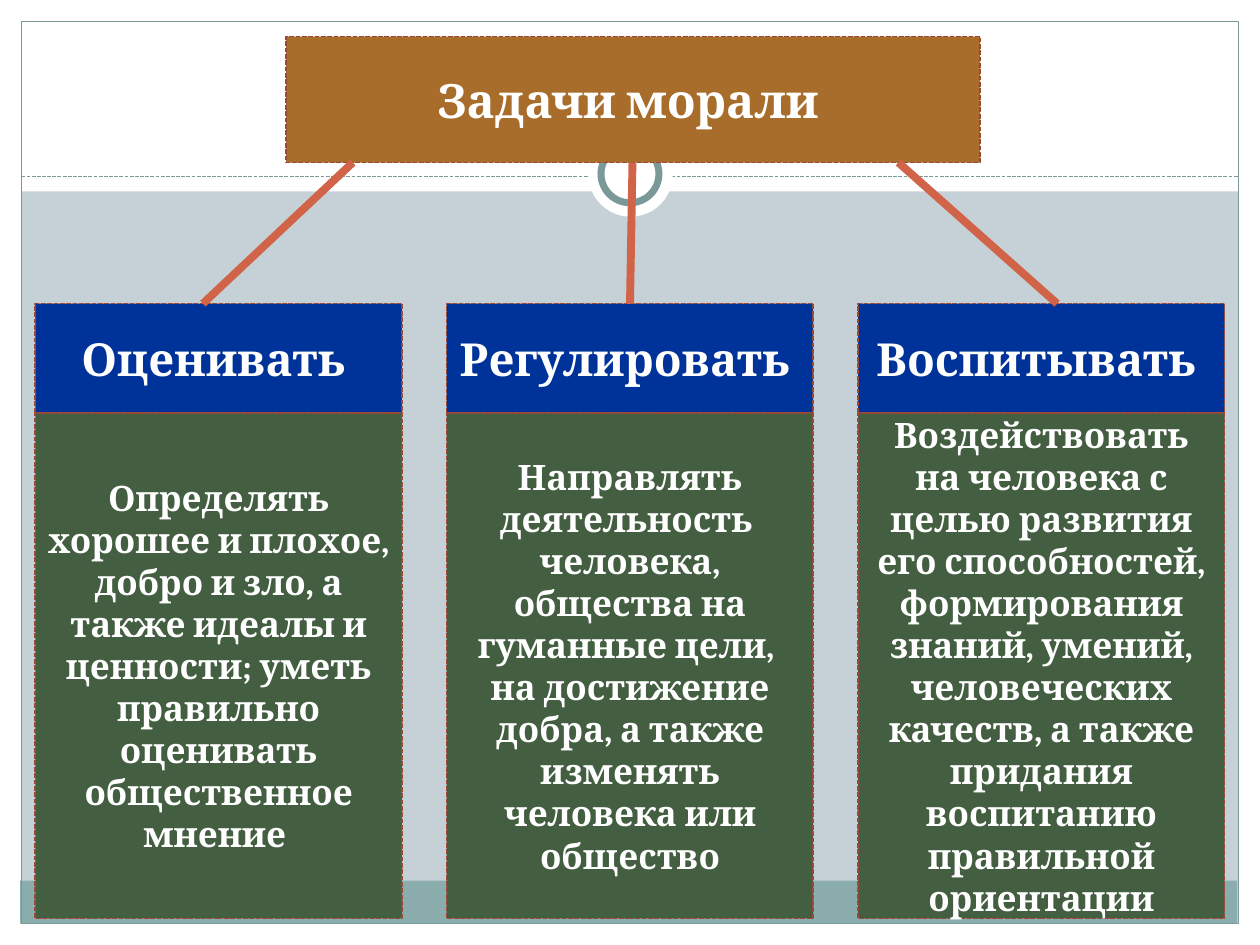
"""Build a slide on the three tasks of morality."""
import pptx
import pptx.dml.color
import pptx.enum.dml
import pptx.enum.shapes
import pptx.enum.text
import pptx.oxml
import pptx.util

Inches = pptx.util.Inches
SHAPES = pptx.enum.shapes.MSO_SHAPE
WHITE, TEAL, BORDER = "FFFFFF", "7C999A", "9B4936"
COLUMN_LEFT, COLUMN_STEP, COLUMN_WIDTH = 0.28, 3.265, 2.91
HEADING_TOP, HEADING_HEIGHT, DETAIL_HEIGHT = 2.41, 0.87, 4.01
TITLE_BOX = (2.27, 0.29, 5.51, 1)
TASKS = [
    ("Оценивать ",
     "Определять хорошее и плохое, добро и зло, а также идеалы и ценности; "
     "уметь правильно оценивать общественное мнение "),
    ("Регулировать ",
     "Направлять деятельность  человека, общества на гуманные цели,  "
     "на достижение добра, а также изменять человека или общество"),
    ("Воспитывать ",
     "Воздействовать на человека с целью развития его способностей, "
     "формирования знаний, умений, человеческих качеств, а также придания "
     "воспитанию правильной ориентации"),
]
BRANCHES = [((2.8, 1.29), (1.61, 2.41)),
            ((7.13, 1.29), (8.39, 2.41)),
            ((5.02, 1.29), (5, 2.41))]


def paint(fill, color):
    """Give a fill one solid colour."""
    fill.solid()
    fill.fore_color.rgb = pptx.dml.color.RGBColor.from_string(color)


def stroke(line, color, width, dashed=False):
    """Set the colour, width and dash of a line."""
    paint(line.fill, color)
    line.width = pptx.util.Pt(width)
    if dashed:
        line.dash_style = pptx.enum.dml.MSO_LINE.SQUARE_DOT


def add_panel(slide, box, fill=None, line=None, kind=SHAPES.RECTANGLE):
    """Add a plain shape with an optional fill and outline."""
    panel = slide.shapes.add_shape(kind, *map(Inches, box))
    panel.shadow.inherit = False
    if fill:
        paint(panel.fill, fill)
    else:
        panel.fill.background()
    if line:
        stroke(panel.line, *line)
    else:
        panel.line.fill.background()
    return panel


def add_line(slide, start, end, *style):
    """Add a straight line without a shadow."""
    connector = slide.shapes.add_connector(
        pptx.enum.shapes.MSO_CONNECTOR.STRAIGHT,
        *map(Inches, start + end))
    stroke(connector.line, *style)
    properties = connector._element.spPr
    properties.append(pptx.oxml.parse_xml(
        '<a:effectLst xmlns:a='
        '"http://schemas.openxmlformats.org/drawingml/2006/main"/>'))


def write(shape, text, size):
    """Write bold white text in the middle of a shape."""
    frame = shape.text_frame
    frame.text = text
    frame.word_wrap = True
    frame.auto_size = pptx.enum.text.MSO_AUTO_SIZE.NONE
    frame.vertical_anchor = pptx.enum.text.MSO_ANCHOR.MIDDLE
    paragraph = frame.paragraphs[0]
    paragraph.alignment = pptx.enum.text.PP_ALIGN.CENTER
    paragraph.font.name = "Cambria"
    paragraph.font.size = pptx.util.Pt(size)
    paragraph.font.bold = True
    paint(paragraph.font.fill, WHITE)


def add_backdrop(slide):
    """Draw the framed background with its ring."""
    paint(slide.background.fill, "C5D1D7")
    for margin in [(0, 7.33, 10, 0.17), (0, 0, 10, 1.52),
                   (0, 0, 0.17, 7.5), (9.83, 0, 0.17, 7.5)]:
        add_panel(slide, margin, WHITE)
    add_panel(slide, (0.16, 6.99, 9.66, 0.34), "8CADAE")
    add_panel(slide, (0.17, 0.17, 9.66, 7.16), line=(TEAL, 0.75))
    add_line(slide, (0.17, 1.4), (9.83, 1.4), TEAL, 0.75, True)
    add_panel(slide, (4.67, 1.05, 0.67, 0.67), WHITE, kind=SHAPES.OVAL)
    add_panel(slide, (4.77, 1.15, 0.46, 0.46), WHITE, (TEAL, 4), SHAPES.OVAL)


def place_title(slide, text):
    """Turn the title placeholder into a box above the backdrop."""
    title = slide.shapes.title
    title.left, title.top, title.width, title.height = map(Inches, TITLE_BOX)
    paint(title.fill, "A96D2B")
    stroke(title.line, BORDER, 0.9, True)
    write(title, text, 27)
    slide.shapes._spTree.append(title._element)


def add_box(slide, box, fill, text, size):
    """Add a filled text box with a dashed border."""
    write(add_panel(slide, box, fill, (BORDER, 0.9, True)), text, size)


def main():
    """Build and save the slide."""
    deck = pptx.Presentation()
    deck.slide_width, deck.slide_height = Inches(10), Inches(7.5)
    slide = deck.slides.add_slide(deck.slide_layouts.get_by_name("Title Only"))
    add_backdrop(slide)
    place_title(slide, "Задачи морали ")
    for column, (heading, detail) in enumerate(TASKS):
        left = COLUMN_LEFT + column * COLUMN_STEP
        add_box(slide, (left, HEADING_TOP, COLUMN_WIDTH, HEADING_HEIGHT),
                "003399", heading, 26)
        add_box(slide, (left, HEADING_TOP + HEADING_HEIGHT, COLUMN_WIDTH,
                        DETAIL_HEIGHT), "435E40", detail, 20)
    for start, end in BRANCHES:
        add_line(slide, start, end, "D16349", 4.5)
    deck.save("out.pptx")


if __name__ == "__main__":
    main()
